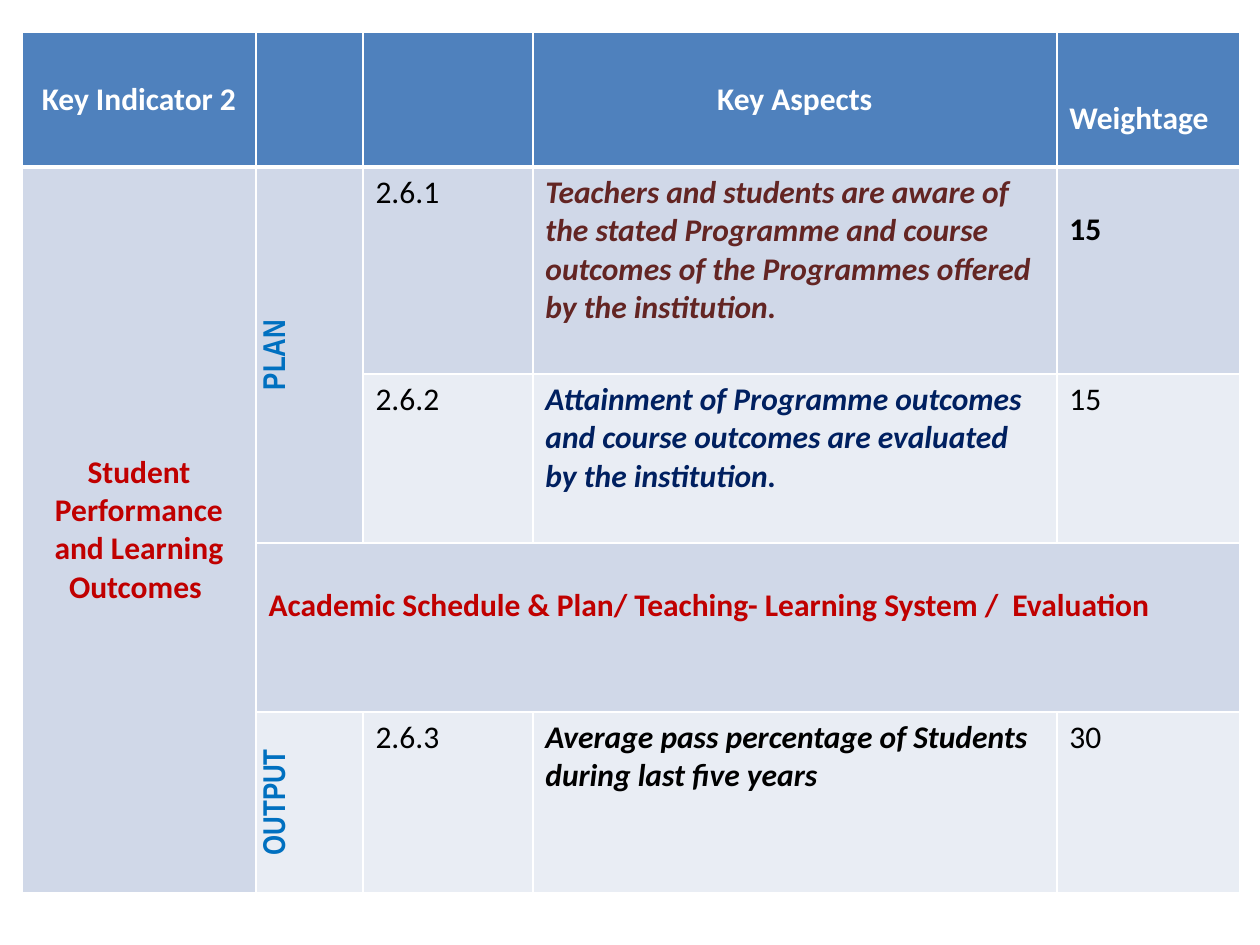
from lxml import etree
from pptx import Presentation
from pptx.dml.color import RGBColor
from pptx.enum.text import MSO_ANCHOR, PP_ALIGN
from pptx.oxml.ns import qn
from pptx.util import Pt

PX = 914400 // 126
CENTER, LEFT = PP_ALIGN.CENTER, PP_ALIGN.LEFT
MIDDLE, TOP = MSO_ANCHOR.MIDDLE, MSO_ANCHOR.TOP
COLORS = {
    "white": "FFFFFF", "black": "000000", "header": "4F81BD",
    "dark_band": "D0D8E8", "light_band": "E9EDF4", "red": "C00000",
    "blue": "0070C0", "brown": "632523", "navy": "002060",
}
COLUMNS = [234, 107, 170, 524, 183]
ROWS = [135, 207, 169, 169, 181]
BANDS = ["header", "dark_band", "light_band", "dark_band", "light_band"]
MERGES = [((1, 0), (4, 0)), ((1, 1), (2, 1)), ((3, 1), (3, 4))]
LOWERED = 44  # top margin that moves text down by one line
ASPECTS = [
    (1, "2.6.1", "Teachers and students are aware of the stated Programme and "
     "course outcomes of the Programmes offered by the institution.", "brown"),
    (2, "2.6.2", "Attainment of Programme outcomes and course outcomes are "
     "evaluated by the institution.", "navy"),
    (4, "2.6.3", "Average pass percentage of Students during last five years",
     "black"),
]


def rgb(name):
    return RGBColor.from_string(COLORS[name])


def add_border(cell, side, width):
    ln = etree.SubElement(cell._tc.get_or_add_tcPr(), qn(f"a:ln{side}"),
                          w=str(Pt(width)))
    fill = etree.SubElement(ln, qn("a:solidFill"))
    etree.SubElement(fill, qn("a:srgbClr"), val=COLORS["white"])


def style_cell(cell, row):
    """Give a cell its borders and band fill, with a thick rule under the header."""
    widths = {"L": 1, "R": 1, "T": 3 if row == 1 else 1, "B": 3 if row == 0 else 1}
    for side, width in widths.items():
        add_border(cell, side, width)
    cell.fill.solid()
    cell.fill.fore_color.rgb = rgb(BANDS[row])


def write(cell, text, color="black", bold=False, italic=False, align=LEFT,
          anchor=TOP, font="Calibri", top=None):
    cell.vertical_anchor = anchor
    if top is not None:
        cell.margin_top = top * PX
    tf = cell.text_frame
    tf.text = text
    p = tf.paragraphs[0]
    p.alignment = align
    f = p.runs[0].font
    f.name, f.size, f.bold, f.italic = font, Pt(18), bold, italic
    f.color.rgb = rgb(color)


def write_vertical(cell, text):
    write(cell, text, "blue", bold=True, align=CENTER, anchor=MIDDLE,
          font="Arial Narrow")
    cell._tc.get_or_add_tcPr().set("vert", "vert270")


def add_grid(s):
    table = s.shapes.add_table(len(ROWS), len(COLUMNS), 22 * PX, 32 * PX,
                               sum(COLUMNS) * PX, sum(ROWS) * PX).table
    for column, width in zip(table.columns, COLUMNS):
        column.width = width * PX
    for i, (row, height) in enumerate(zip(table.rows, ROWS)):
        row.height = height * PX
        for cell in row.cells:
            style_cell(cell, i)
    for first, last in MERGES:
        table.cell(*first).merge(table.cell(*last))
    return table


def fill_header(table):
    for column, text in ((0, "Key Indicator 2"), (3, "Key Aspects")):
        write(table.cell(0, column), text, "white", bold=True, align=CENTER,
              anchor=MIDDLE)
    write(table.cell(0, 4), "Weightage", "white", bold=True, anchor=MIDDLE,
          top=LOWERED)


def fill_body(table):
    write(table.cell(1, 0), "Student Performance and Learning Outcomes ", "red",
          bold=True, align=CENTER, anchor=MIDDLE)
    write_vertical(table.cell(1, 1), "PLAN")
    write_vertical(table.cell(4, 1), "OUTPUT")
    for row, number, aspect, color in ASPECTS:
        write(table.cell(row, 2), number)
        write(table.cell(row, 3), aspect, color, bold=True, italic=True)
    write(table.cell(1, 4), "15", bold=True, top=LOWERED)
    write(table.cell(2, 4), "15")
    write(table.cell(4, 4), "30")
    write(table.cell(3, 1), "Academic Schedule & Plan/ Teaching- Learning "
          "System /  Evaluation", "red", bold=True, top=LOWERED)


def main():
    prs = Presentation()
    prs.slide_width, prs.slide_height = 1260 * PX, 945 * PX
    s = prs.slides.add_slide(prs.slide_layouts[6])
    table = add_grid(s)
    fill_header(table)
    fill_body(table)
    prs.save("out.pptx")


if __name__ == "__main__":
    main()
